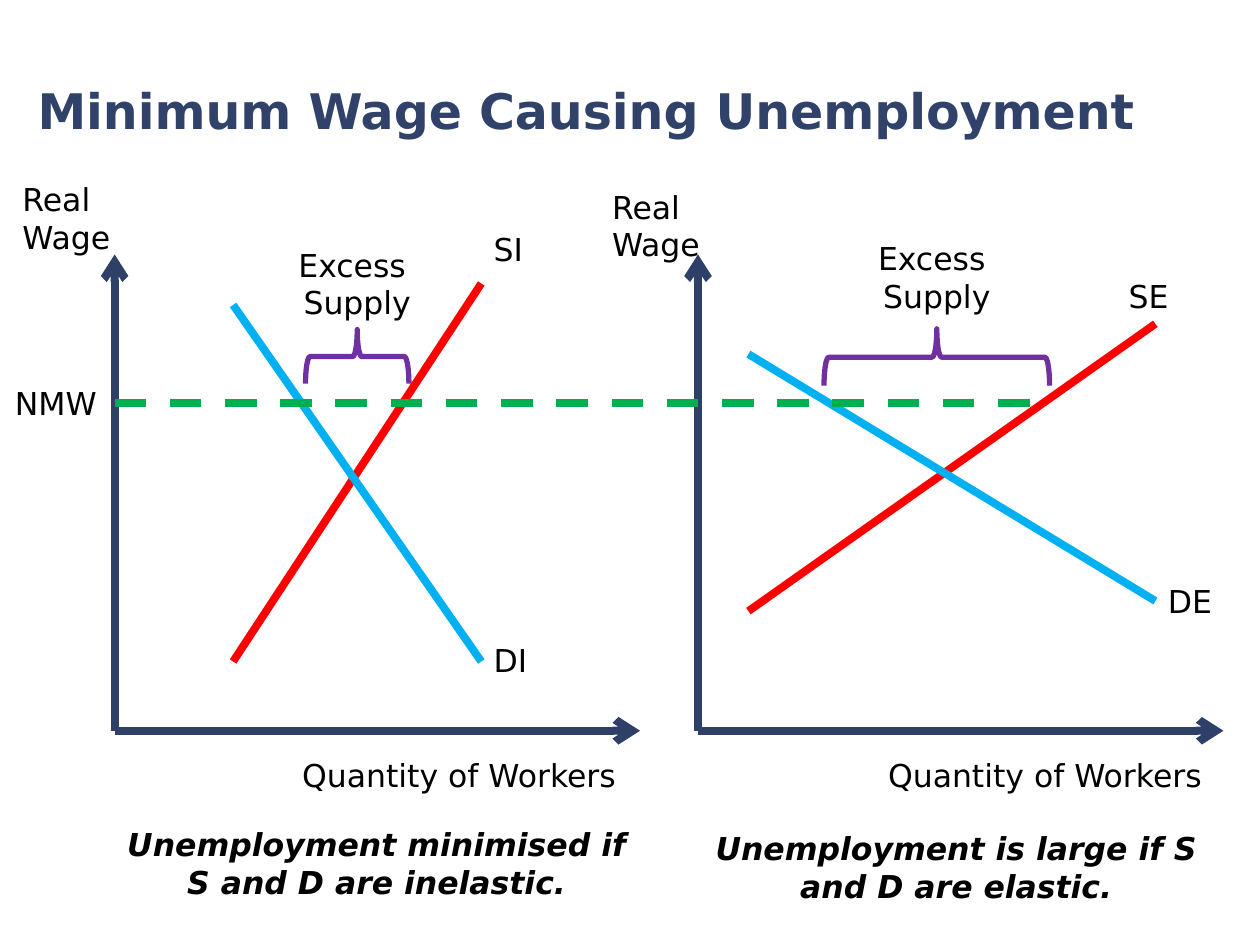
from lxml import etree
from pptx import Presentation
from pptx.dml.color import RGBColor
from pptx.enum.dml import MSO_LINE
from pptx.enum.shapes import MSO_CONNECTOR, MSO_SHAPE
from pptx.enum.text import MSO_ANCHOR, PP_ALIGN
from pptx.oxml.ns import qn
from pptx.util import Inches, Pt

STRAIGHT, BRACE = MSO_CONNECTOR.STRAIGHT, MSO_SHAPE.LEFT_BRACE
DASH = MSO_LINE.DASH
LEFT, CENTER = PP_ALIGN.LEFT, PP_ALIGN.CENTER
TOP, MIDDLE = MSO_ANCHOR.TOP, MSO_ANCHOR.MIDDLE

FONT = "DejaVu Sans"
COLORS = {"title": "304269", "axis": "2E4068", "supply": "FF0000",
          "demand": "00B0F0", "wage": "00B050", "brace": "7030A0",
          "text": "000000"}

# All positions are percentages of the slide's width (x) and height (y)
WIDTH, HEIGHT = Inches(10), Inches(7.5)
BASE, AXIS_TOP, WAGE = 77.33, 26.93, 42.67
AXIS_LENGTH = 41.7
ONE_LINE, TWO_LINES = 5.33, 9.47

# Curves run from left to right; labels are (text, left, top)
PANELS = [
    {"origin": 9.1,
     "supply": (18.5, 70, 38.2, 30), "demand": (18.5, 32.27, 38.2, 70),
     "labels": [("SI", 38.2, 23.73), ("DI", 38.2, 67.2)],
     "real_wage": (0.8, 18.4), "quantity": 23,
     "brace": (24.25, 34.87, 8.2, 5.73), "excess": (22.1, 25.33),
     "caption": ("Unemployment minimised if S and D are inelastic.", 9.1, 86.67)},
    {"origin": 55.4,
     "supply": (59.4, 64.67, 91.7, 34.27), "demand": (59.4, 37.47, 91.7, 63.6),
     "labels": [("SE", 88.6, 28.67), ("DE", 91.7, 60.93)],
     "real_wage": (47.6, 19.2), "quantity": 69.5,
     "brace": (65.4, 34.8, 17.9, 6), "excess": (68.1, 24.67),
     "caption": ("Unemployment is large if S and D are elastic.", 55.1, 87.07)},
]


def px(share):
    return int(WIDTH * share / 100)


def py(share):
    return int(HEIGHT * share / 100)


def rgb(name):
    return RGBColor.from_string(COLORS[name])


def add_line(s, ends, color, arrow=False, dash=None):
    x1, y1, x2, y2 = ends
    line = s.shapes.add_connector(STRAIGHT, px(x1), py(y1), px(x2), py(y2))
    line.line.color.rgb = rgb(color)
    line.line.width = Pt(4.5)
    if dash:
        line.line.dash_style = dash
    props = line._element.spPr
    if arrow:
        etree.SubElement(props.find(qn("a:ln")), qn("a:tailEnd"), type="arrow")
    etree.SubElement(props, qn("a:effectLst"))


def add_text(s, text, box, align=LEFT, anchor=TOP, size=18, color="text",
             bold=False, italic=False):
    x, y, w, h = box
    tf = s.shapes.add_textbox(px(x), py(y), px(w), py(h)).text_frame
    tf.word_wrap = True
    tf.vertical_anchor = anchor
    tf.text = text
    for p in tf.paragraphs:
        p.alignment = align
        for r in p.runs:
            r.font.name = FONT
            r.font.size = Pt(size)
            r.font.bold = bold
            r.font.italic = italic
            r.font.color.rgb = rgb(color)


def add_brace(s, box):
    """Turn a left brace by 90 degrees so that it spans the box, point up."""
    x, y, w, h = px(box[0]), py(box[1]), px(box[2]), py(box[3])
    sp = s.shapes.add_shape(BRACE, x + (w - h) // 2, y + (h - w) // 2, h, w)
    sp.rotation = 90
    sp.shadow.inherit = False
    sp.fill.background()
    sp.line.color.rgb = rgb("brace")
    sp.line.width = Pt(3)


def add_diagram(s, panel):
    # Axes
    x = panel["origin"]
    add_line(s, (x, BASE, x, AXIS_TOP), "axis", arrow=True)
    add_line(s, (x, BASE, x + AXIS_LENGTH, BASE), "axis", arrow=True)
    add_text(s, "Real Wage", (*panel["real_wage"], 10.7, TWO_LINES))
    add_text(s, "Quantity of Workers", (panel["quantity"], 79.33, 27.7, ONE_LINE))

    # Curves
    for curve in ("supply", "demand"):
        add_line(s, panel[curve], curve)
    for text, left, top in panel["labels"]:
        add_text(s, text, (left, top, 6.3, ONE_LINE))

    # Excess supply
    add_brace(s, panel["brace"])
    add_text(s, "Excess \vSupply", (*panel["excess"], 12.5, TWO_LINES), CENTER)

    # Caption
    text, left, top = panel["caption"]
    add_text(s, text, (left, top, 41.6, TWO_LINES), CENTER, bold=True, italic=True)


def main():
    prs = Presentation()
    prs.slide_width, prs.slide_height = WIDTH, HEIGHT
    s = prs.slides.add_slide(prs.slide_layouts[6])

    add_text(s, "Minimum Wage Causing Unemployment", (2, 3.33, 93, 16.67),
             anchor=MIDDLE, size=28, color="title", bold=True)
    for panel in PANELS:
        add_diagram(s, panel)

    # Minimum wage across both diagrams
    add_line(s, (PANELS[0]["origin"], WAGE, 82.3, WAGE), "wage", dash=DASH)
    add_text(s, "NMW", (0.2, 40, 8.9, ONE_LINE))

    prs.save("out.pptx")


if __name__ == "__main__":
    main()
